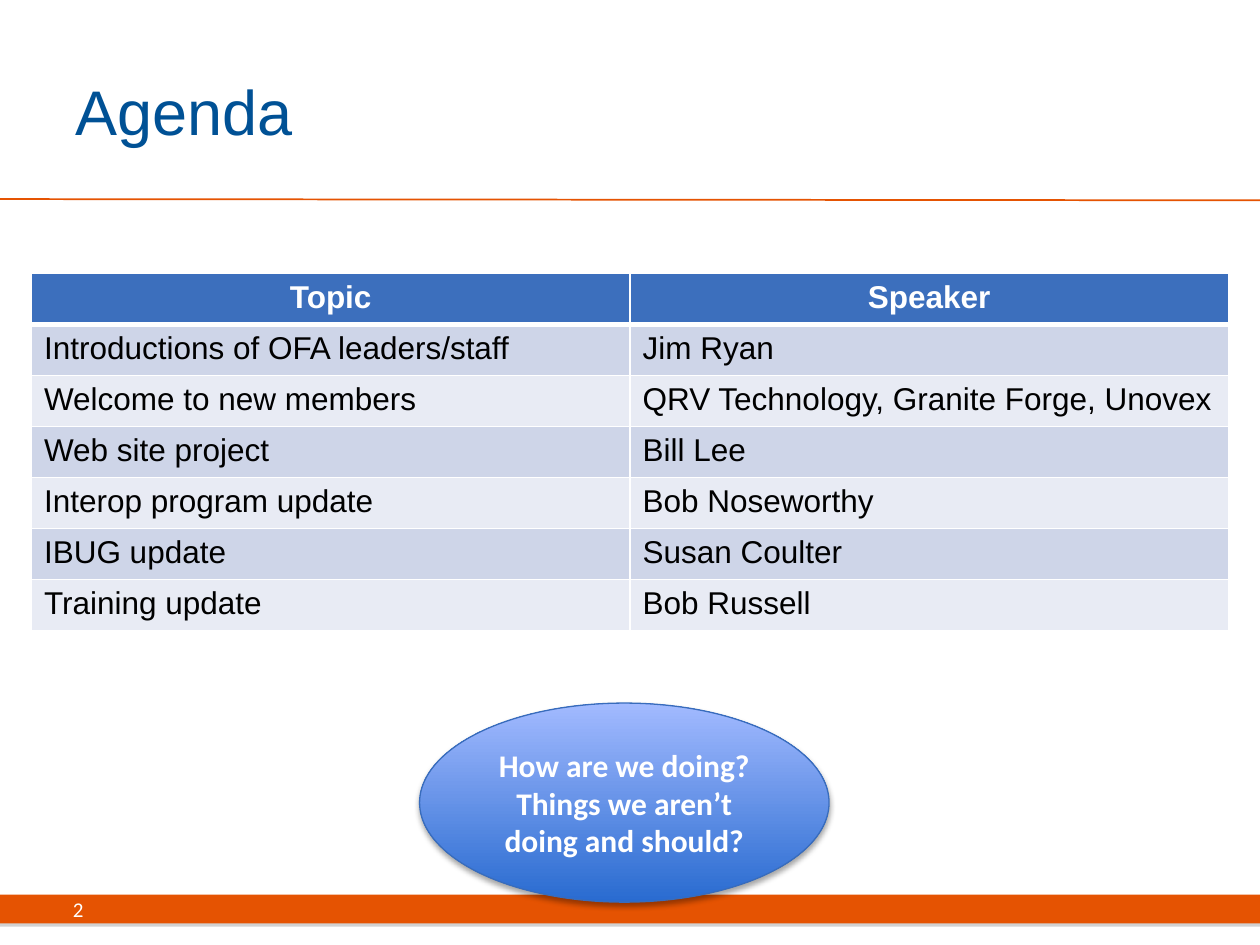
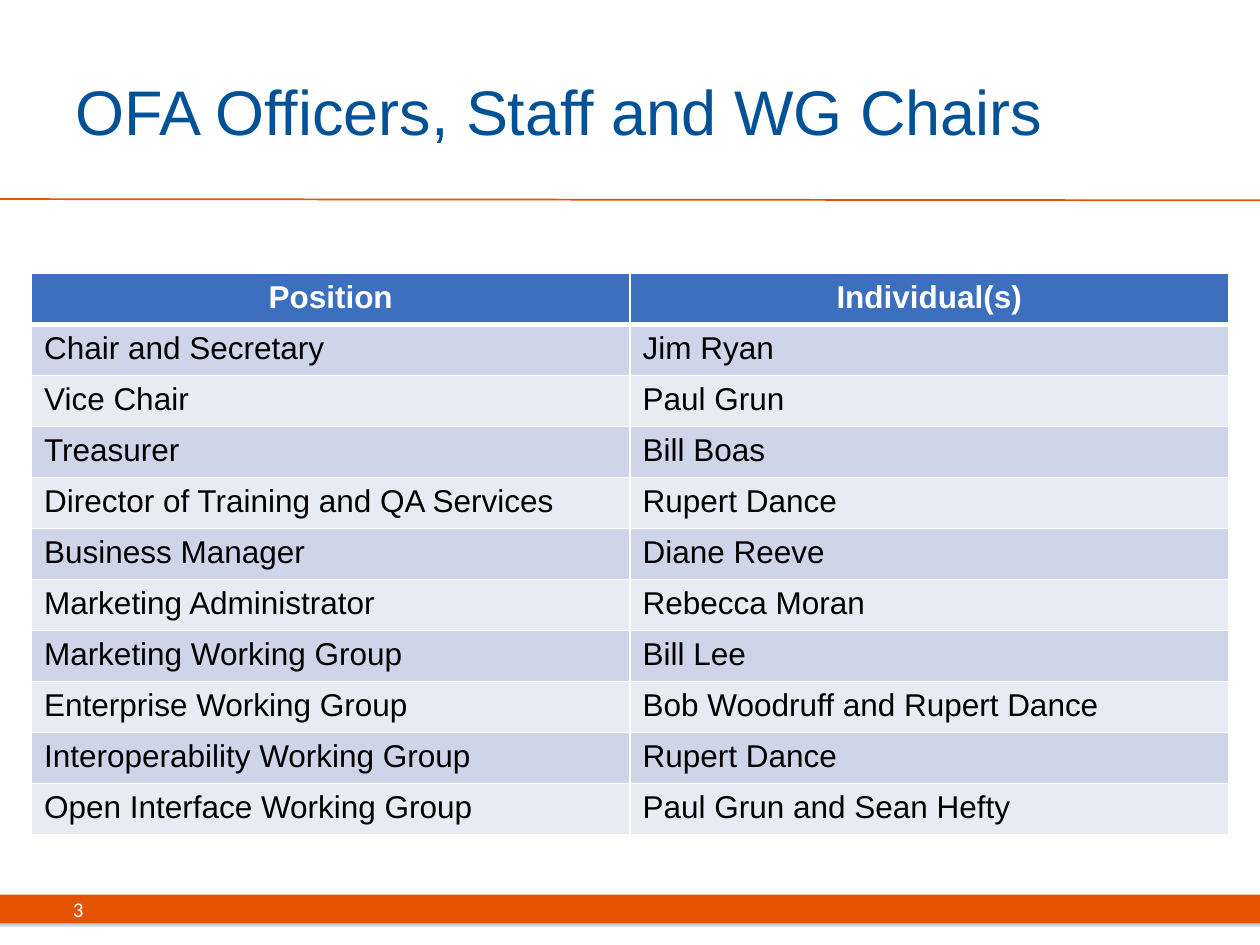
from dataclasses import dataclass
from typing import Any, NamedTuple

import lxml.etree
import pptx
import pptx.dml.color
import pptx.enum.shapes
import pptx.enum.text
import pptx.oxml
import pptx.oxml.ns
import pptx.util

EMU_PER_PX = 4572
SHAPES = pptx.enum.shapes.MSO_SHAPE
ALIGN = pptx.enum.text.PP_ALIGN
MIDDLE = pptx.enum.text.MSO_ANCHOR.MIDDLE


class Box(NamedTuple):
    x: int
    y: int
    w: int
    h: int


class TextStyle(NamedTuple):
    font: str
    size: int
    color: str
    bold: bool = False
    align: Any = ALIGN.LEFT


class Shadow(NamedTuple):
    color: str
    blur: float
    dist: float
    alpha: int = 35
    angle: int = 90


@dataclass(frozen=True)
class Theme:
    accent: str = "E55302"
    header_fill: str = "3C6FBD"
    row_fills: tuple[str, str] = ("CED5E8", "E8EBF4")
    border: str = "FFFFFF"
    callout_stops: tuple[str, str] = ("296BD0", "A2BAFF")
    callout_line: str = "386CBC"
    title: TextStyle = TextStyle("Arial", 36, "005195")
    number: TextStyle = TextStyle("Calibri", 12, "FFFFFF")
    header: TextStyle = TextStyle("Arial", 18, "FFFFFF", True, ALIGN.CENTER)
    body: TextStyle = TextStyle("Arial", 18, "000000")
    callout: TextStyle = TextStyle("Calibri", 18, "FFFFFF", True, ALIGN.CENTER)
    band_shadow: Shadow = Shadow("808080", 0, 1.8)
    callout_shadow: Shadow = Shadow("000000", 3.1, 1.8)


@dataclass(frozen=True)
class TableSlide:
    number: int
    title: str
    rows: tuple[tuple[str, str], ...]
    callout: tuple[str, ...] = ()


THEME = Theme()
SLIDE_W, SLIDE_H = 2000, 1500
BAND = Box(0, 1420, SLIDE_W, 46)
TITLE = Box(100, 50, 1634, 250)
NUMBER = Box(96, 1420, 1810, 46)
CALLOUT = Box(666, 1116, 650, 316)
RULE_Y = (316, 318)
TABLE_X, TABLE_Y, COL_W, ROW_H = 50, 434, 950, 81

SLIDES = (
    TableSlide(2, "Agenda", (
        ("Topic", "Speaker"),
        ("Introductions of OFA leaders/staff", "Jim Ryan"),
        ("Welcome to new members", "QRV Technology, Granite Forge, Unovex"),
        ("Web site project", "Bill Lee"),
        ("Interop program update", "Bob Noseworthy"),
        ("IBUG update", "Susan Coulter"),
        ("Training update", "Bob Russell"),
    ), ("How are we doing?", "Things we aren’t doing and should?")),
    TableSlide(3, "OFA Officers, Staff and WG Chairs", (
        ("Position", "Individual(s)"),
        ("Chair and Secretary", "Jim Ryan"),
        ("Vice Chair", "Paul Grun"),
        ("Treasurer", "Bill Boas"),
        ("Director of Training and QA Services", "Rupert Dance"),
        ("Business Manager", "Diane Reeve"),
        ("Marketing Administrator", "Rebecca Moran"),
        ("Marketing Working Group", "Bill Lee"),
        ("Enterprise Working Group", "Bob Woodruff and Rupert Dance"),
        ("Interoperability Working Group", "Rupert Dance"),
        ("Open Interface Working Group", "Paul Grun and Sean Hefty"),
    )),
)


def px(n: int) -> pptx.util.Emu:
    return pptx.util.Emu(n * EMU_PER_PX)


def place(box: Box) -> tuple[pptx.util.Emu, ...]:
    return tuple(px(n) for n in box)


def rgb(color: str) -> pptx.dml.color.RGBColor:
    return pptx.dml.color.RGBColor.from_string(color)


def write(tf: Any, lines: tuple[str, ...], style: TextStyle) -> None:
    for i, line in enumerate(lines):
        p = tf.paragraphs[0] if i == 0 else tf.add_paragraph()
        p.alignment = style.align
        r = p.add_run()
        r.text = line
        r.font.color.rgb = rgb(style.color)
        values = {"name": style.font, "size": pptx.util.Pt(style.size), "bold": style.bold}
        for name, value in values.items():
            setattr(r.font, name, value)


def add_text(s: Any, box: Box, text: str, style: TextStyle) -> None:
    tf = s.shapes.add_textbox(*place(box)).text_frame
    for name, value in {"word_wrap": True, "vertical_anchor": MIDDLE}.items():
        setattr(tf, name, value)
    write(tf, (text,), style)


def set_shadow(sp: Any, shadow: Shadow) -> None:
    sp.shadow.inherit = False
    effects = sp.element.spPr.find(pptx.oxml.ns.qn("a:effectLst"))
    effects.append(pptx.oxml.parse_xml(
        f'<a:outerShdw {pptx.oxml.ns.nsdecls("a")} blurRad="{pptx.util.Pt(shadow.blur)}" '
        f'dist="{pptx.util.Pt(shadow.dist)}" dir="{shadow.angle * 60000}" rotWithShape="0">'
        f'<a:srgbClr val="{shadow.color}"><a:alpha val="{shadow.alpha * 1000}"/></a:srgbClr>'
        '</a:outerShdw>'))


def add_frame(s: Any, page: TableSlide) -> None:
    sp = s.shapes.add_shape(SHAPES.RECTANGLE, *place(BAND))
    sp.fill.solid()
    sp.fill.fore_color.rgb = rgb(THEME.accent)
    sp.line.fill.background()
    set_shadow(sp, THEME.band_shadow)

    rule = s.shapes.add_connector(
        pptx.enum.shapes.MSO_CONNECTOR.STRAIGHT,
        px(0), px(RULE_Y[0]), px(SLIDE_W), px(RULE_Y[1]))
    rule.line.color.rgb = rgb(THEME.accent)
    rule.line.width = pptx.util.Pt(1)
    lxml.etree.SubElement(rule.element.spPr, pptx.oxml.ns.qn("a:effectLst"))

    add_text(s, TITLE, page.title, THEME.title)
    add_text(s, NUMBER, str(page.number), THEME.number)


def set_borders(cell: Any, widths: dict[str, int]) -> None:
    tc_pr = cell._tc.get_or_add_tcPr()
    for i, (side, width) in enumerate(widths.items()):
        tc_pr.insert(i, pptx.oxml.parse_xml(
            f'<a:ln{side} {pptx.oxml.ns.nsdecls("a")} w="{pptx.util.Pt(width)}">'
            f'<a:solidFill><a:srgbClr val="{THEME.border}"/></a:solidFill></a:ln{side}>'))


def add_table(s: Any, rows: tuple[tuple[str, str], ...]) -> None:
    n_cols = len(rows[0])
    box = Box(TABLE_X, TABLE_Y, COL_W * n_cols, ROW_H * len(rows))
    table = s.shapes.add_table(len(rows), n_cols, *place(box)).table
    table.horz_banding = False
    for column in table.columns:
        column.width = px(COL_W)
    for i, row in enumerate(rows):
        table.rows[i].height = px(ROW_H)
        head = i == 0
        fill = THEME.header_fill if head else THEME.row_fills[(i - 1) % 2]
        for j, text in enumerate(row):
            cell = table.cell(i, j)
            cell.fill.solid()
            cell.fill.fore_color.rgb = rgb(fill)
            set_borders(cell, {"L": 1, "R": 1, "T": 3 if i == 1 else 1, "B": 3 if head else 1})
            write(cell.text_frame, (text,), THEME.header if head else THEME.body)


def add_callout(s: Any, lines: tuple[str, ...]) -> None:
    sp = s.shapes.add_shape(SHAPES.OVAL, *place(CALLOUT))
    sp.fill.gradient()
    sp.fill.gradient_angle = 90
    for i, (stop, color) in enumerate(zip(sp.fill.gradient_stops, THEME.callout_stops)):
        stop.position = i
        stop.color.rgb = rgb(color)
    sp.line.color.rgb = rgb(THEME.callout_line)
    sp.line.width = pptx.util.Pt(0.75)
    set_shadow(sp, THEME.callout_shadow)
    sp.text_frame.vertical_anchor = MIDDLE
    write(sp.text_frame, lines, THEME.callout)


def main() -> None:
    prs = pptx.Presentation()
    prs.slide_width, prs.slide_height = px(SLIDE_W), px(SLIDE_H)
    for page in SLIDES:
        s = prs.slides.add_slide(prs.slide_layouts[6])
        add_frame(s, page)
        add_table(s, page.rows)
        if page.callout:
            add_callout(s, page.callout)
    prs.save("out.pptx")


if __name__ == "__main__":
    main()
